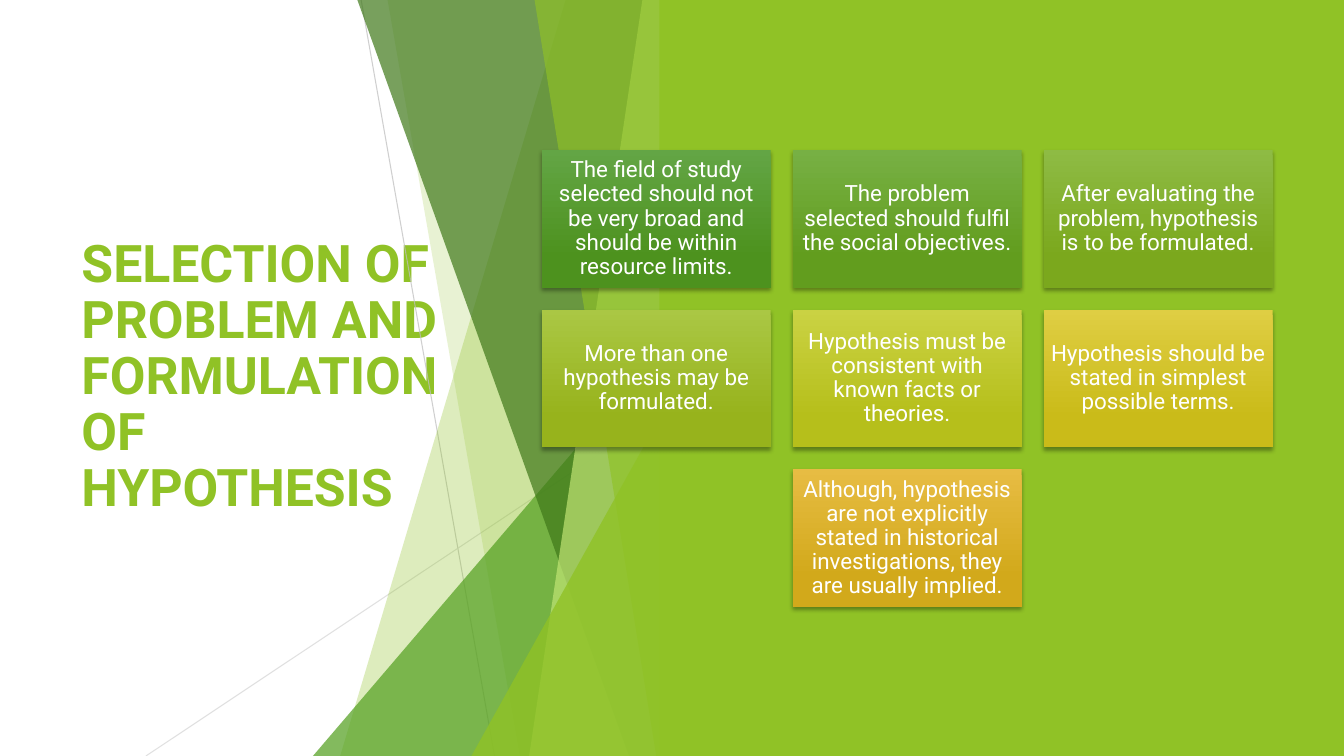
from dataclasses import dataclass

from lxml import etree
from pptx import Presentation
from pptx.dml.color import RGBColor
from pptx.enum.shapes import MSO_CONNECTOR, MSO_SHAPE
from pptx.enum.text import MSO_ANCHOR, MSO_AUTO_SIZE, PP_ALIGN
from pptx.oxml.ns import qn
from pptx.util import Pt

PX = 9525
SLIDE_WIDTH, SLIDE_HEIGHT = 1280, 720
TITLE_ONLY_LAYOUT = 5
RECTANGLE = MSO_SHAPE.RECTANGLE
TRIANGLE = MSO_SHAPE.ISOSCELES_TRIANGLE
STRAIGHT = MSO_CONNECTOR.STRAIGHT
MIDDLE = MSO_ANCHOR.MIDDLE
NO_AUTOFIT = MSO_AUTO_SIZE.NONE
LEFT, CENTER = PP_ALIGN.LEFT, PP_ALIGN.CENTER


@dataclass(frozen=True)
class Theme:
    """Hold the colours, font and type sizes of the slide."""
    font: str = "Roboto"
    title_size: int = 37
    card_size: int = 16
    lime: str = "90C226"
    green: str = "54A021"
    forest: str = "3F7819"
    pale: str = "C0E474"
    white: str = "FFFFFF"
    black: str = "000000"
    silver: str = "BFBFBF"
    mist: str = "D9D9D9"


THEME = Theme()

TITLE = "SELECTION OF PROBLEM AND FORMULATION OF HYPOTHESIS"
CARD_LEFT, CARD_TOP = 516, 143
CARD_WIDTH, CARD_HEIGHT = 218, 131
COLUMN_STEP, ROW_STEP = 239, 152
CARDS = [
    (0, 0, "63A545", "4D921E",
     "The field of study selected should not be very broad and should be within resource limits."),
    (1, 0, "77B044", "629D1E",
     "The problem selected should fulfil the social objectives."),
    (2, 0, "8EBB44", "7BA81D",
     "After evaluating the problem, hypothesis is to be formulated."),
    (0, 1, "AAC744", "97B31C",
     "More than one hypothesis may be formulated."),
    (1, 1, "CAD243", "B6BF1B",
     "Hypothesis must be consistent with known facts or theories."),
    (2, 1, "DFCE43", "CABB19",
     "Hypothesis should be stated in simplest possible terms."),
    (1, 2, "E7BC43", "D2A91B",
     "Although, hypothesis are not explicitly stated in historical investigations, they are usually implied."),
]


def px(*lengths):
    """Turn pixel lengths into EMU."""
    return [length * PX for length in lengths]


def set_opacity(color_parent, percent):
    """Give the first RGB colour under an element an opacity."""
    color = color_parent.find(".//" + qn("a:srgbClr"))
    etree.SubElement(color, qn("a:alpha"), val=str(percent * 1000))


def paint(shape, color, opacity=100):
    """Fill a shape with one colour and remove its outline and shadow."""
    shape.fill.solid()
    shape.fill.fore_color.rgb = RGBColor.from_string(color)
    if opacity < 100:
        set_opacity(shape._element.spPr, opacity)
    shape.line.fill.background()
    shape.shadow.inherit = False


def write_text(shape, text, *, size, color, bold=False, align=LEFT, inset=None):
    """Write one formatted paragraph into a shape."""
    frame = shape.text_frame
    frame.text = text
    frame.word_wrap = True
    frame.auto_size = NO_AUTOFIT
    frame.vertical_anchor = MIDDLE
    if inset is not None:
        frame.margin_left = frame.margin_right = inset * PX
        frame.margin_top = frame.margin_bottom = inset * PX
    paragraph = frame.paragraphs[0]
    paragraph.alignment = align
    paragraph.line_spacing = 0.9
    paragraph.space_before = Pt(0)
    font = paragraph.runs[0].font
    font.name = THEME.font
    font.size = Pt(size)
    font.bold = bold
    font.color.rgb = RGBColor.from_string(color)


def add_title(slide):
    """Place and format the slide title."""
    title = slide.shapes.title
    title.left, title.top, title.width, title.height = px(68, 145, 372, 430)
    write_text(title, TITLE, size=THEME.title_size, color=THEME.lime, bold=True)


def add_ray(slide, start, end, color, opacity):
    """Draw a thin translucent line."""
    ray = slide.shapes.add_connector(STRAIGHT, *px(*start, *end))
    ray.line.color.rgb = RGBColor.from_string(color)
    ray.line.width = Pt(0.75)
    properties = ray._element.spPr
    set_opacity(properties, opacity)
    etree.SubElement(properties, qn("a:effectLst"))


def add_facet(slide, top_left, bottom_left, right, color, opacity):
    """Draw a full-height band with a slanted left edge."""
    builder = slide.shapes.build_freeform(top_left, -1, scale=PX)
    builder.add_line_segments(
        [(right, -1), (right, SLIDE_HEIGHT), (bottom_left, SLIDE_HEIGHT)])
    paint(builder.convert_to_shape(), color, opacity)


def add_wedge(slide, left, top, color, opacity):
    """Draw a triangle rising to the right from the slide's bottom edge."""
    wedge = slide.shapes.add_shape(
        TRIANGLE, *px(left, top, 640 - left, SLIDE_HEIGHT - top))
    wedge.adjustments[0] = 1
    paint(wedge, color, opacity)


def add_panel(slide, left, width, color):
    """Draw a plain full-height panel."""
    panel = slide.shapes.add_shape(RECTANGLE, *px(left, 0, width, SLIDE_HEIGHT))
    paint(panel, color)


def add_card(slide, column, row, light, dark, text):
    """Draw a gradient card with a soft shadow and centred text."""
    card = slide.shapes.add_shape(RECTANGLE, *px(
        CARD_LEFT + column * COLUMN_STEP, CARD_TOP + row * ROW_STEP,
        CARD_WIDTH, CARD_HEIGHT))
    card.fill.gradient()
    card.fill.gradient_angle = 270
    for stop, position, color in zip(card.fill.gradient_stops, (0, 0.78), (light, dark)):
        stop.position = position
        stop.color.rgb = RGBColor.from_string(color)
    card.line.fill.background()
    card.shadow.inherit = False
    effects = card._element.spPr.find(qn("a:effectLst"))
    shadow = etree.SubElement(
        effects, qn("a:outerShdw"), blurRad=str(Pt(3)), dist=str(Pt(2)),
        dir="5400000", rotWithShape="0")
    etree.SubElement(shadow, qn("a:srgbClr"), val=THEME.black)
    set_opacity(shadow, 35)
    write_text(card, text, size=THEME.card_size, color=THEME.white,
               align=CENTER, inset=7)


def main():
    """Build and save the slide."""
    presentation = Presentation()
    presentation.slide_width, presentation.slide_height = px(SLIDE_WIDTH, SLIDE_HEIGHT)
    slide = presentation.slides.add_slide(presentation.slide_layouts[TITLE_ONLY_LAYOUT])
    add_title(slide)
    add_ray(slide, (344, 0), (471, 720), THEME.silver, 75)
    add_ray(slide, (639, 387), (139, 720), THEME.mist, 80)
    add_facet(slide, 539, 324, 639, THEME.lime, 30)
    add_facet(slide, 369, 495, 640, THEME.lime, 20)
    add_wedge(slide, 298, 320, THEME.green, 72)
    add_facet(slide, 340, 599, 639, THEME.forest, 70)
    add_facet(slide, 612, 504, 639, THEME.pale, 70)
    add_facet(slide, 509, 625, 639, THEME.lime, 65)
    add_wedge(slide, 449, 377, THEME.lime, 80)
    add_panel(slide, 628, 652, THEME.lime)
    for card in CARDS:
        add_card(slide, *card)
    presentation.save("out.pptx")


if __name__ == "__main__":
    main()
